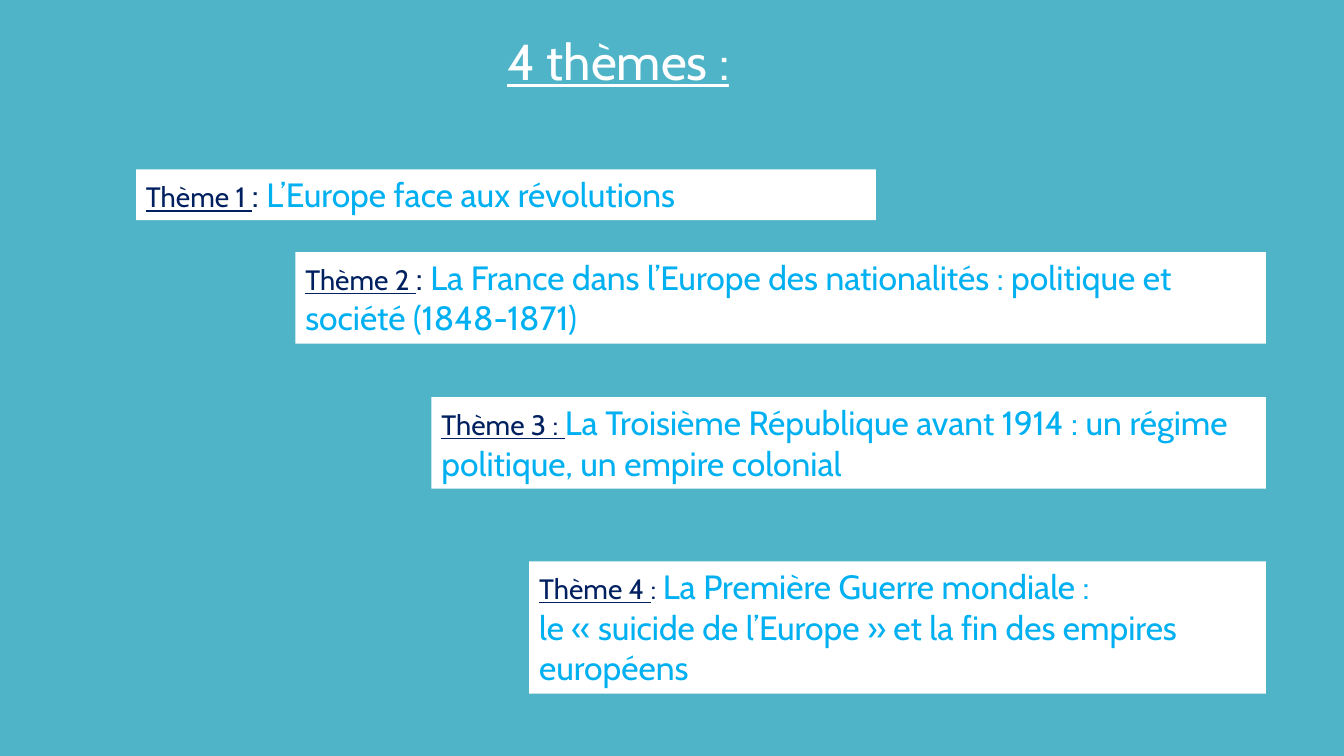
import pptx
import pptx.dml.color
import pptx.enum.shapes
import pptx.enum.text
import pptx.util

Pt = pptx.util.Pt
RGBColor = pptx.dml.color.RGBColor

TEAL = RGBColor(0x50, 0xB4, 0xC8)
WHITE = RGBColor(0xFF, 0xFF, 0xFF)
NAVY = RGBColor(0x00, 0x20, 0x60)
SKY = RGBColor(0x00, 0xB0, 0xF0)

RIGHT_EDGE = 904.3
LABEL_SIZE = 20
TOPIC_SIZE = 24


class ThemeSlide:
    font_name = "Cabin"
    title_size = 36

    def __init__(self, presentation):
        self.slide = presentation.slides.add_slide(presentation.slide_layouts[6])
        background = self.slide.background.fill
        background.solid()
        background.fore_color.rgb = TEAL

    def format_run(self, run, size, color, underline=False):
        run.font.name = self.font_name
        run.font.size = Pt(size)
        run.font.color.rgb = color
        run.font.underline = underline

    def prepare_frame(self, shape):
        text_frame = shape.text_frame
        text_frame.word_wrap = True
        text_frame.auto_size = pptx.enum.text.MSO_AUTO_SIZE.SHAPE_TO_FIT_TEXT
        text_frame.vertical_anchor = pptx.enum.text.MSO_ANCHOR.TOP
        return text_frame

    def title(self, left, top, width, height, text):
        shape = self.slide.shapes.add_textbox(Pt(left), Pt(top), Pt(width), Pt(height))
        text_frame = self.prepare_frame(shape)
        text_frame.text = text
        paragraph = text_frame.paragraphs[0]
        paragraph.alignment = pptx.enum.text.PP_ALIGN.CENTER
        self.format_run(paragraph.runs[0], self.title_size, WHITE, True)

    def theme_box(self, left, top, right, height, label, separator, separator_size, lines):
        shape = self.slide.shapes.add_shape(
            pptx.enum.shapes.MSO_SHAPE.RECTANGLE,
            Pt(left), Pt(top), Pt(right - left), Pt(height))
        shape.shadow.inherit = False
        shape.fill.solid()
        shape.fill.fore_color.rgb = WHITE
        shape.line.fill.background()
        text_frame = self.prepare_frame(shape)

        paragraph = text_frame.paragraphs[0]
        paragraph.text = label
        self.format_run(paragraph.runs[0], LABEL_SIZE, NAVY, True)
        if separator:
            run = paragraph.add_run()
            run.text = separator
            self.format_run(run, separator_size, NAVY)

        for index, line in enumerate(lines):
            if index:
                paragraph = text_frame.add_paragraph()
            run = paragraph.add_run()
            run.text = line
            self.format_run(run, TOPIC_SIZE, SKY)
            paragraph.alignment = pptx.enum.text.PP_ALIGN.LEFT


THEMES = [
    (97.2, 121, 625.7, 36.3, "Thème 1 ", ": ", TOPIC_SIZE,
     ["L’Europe face aux révolutions"]),
    (211, 180, RIGHT_EDGE, 65.4, "Thème 2 ", ": ", TOPIC_SIZE,
     ["La France dans l’Europe des nationalités : politique et société (1848-1871)"]),
    (308.2, 283.7, RIGHT_EDGE, 65.4, "Thème 3 : ", "", TOPIC_SIZE,
     ["La Troisième République avant 1914 : un régime politique, un empire colonial"]),
    (378, 401, RIGHT_EDGE, 94.5, "Thème 4 ", ": ", LABEL_SIZE,
     ["La Première Guerre mondiale :",
      "le « suicide de l’Europe » et la fin des empires européens"]),
]


def main():
    presentation = pptx.Presentation()
    presentation.slide_width = Pt(960)
    presentation.slide_height = Pt(540)
    theme_slide = ThemeSlide(presentation)
    theme_slide.title(313.2, 18, 257, 51, "4 thèmes :")
    for theme in THEMES:
        theme_slide.theme_box(*theme)
    presentation.save("out.pptx")


if __name__ == "__main__":
    main()
